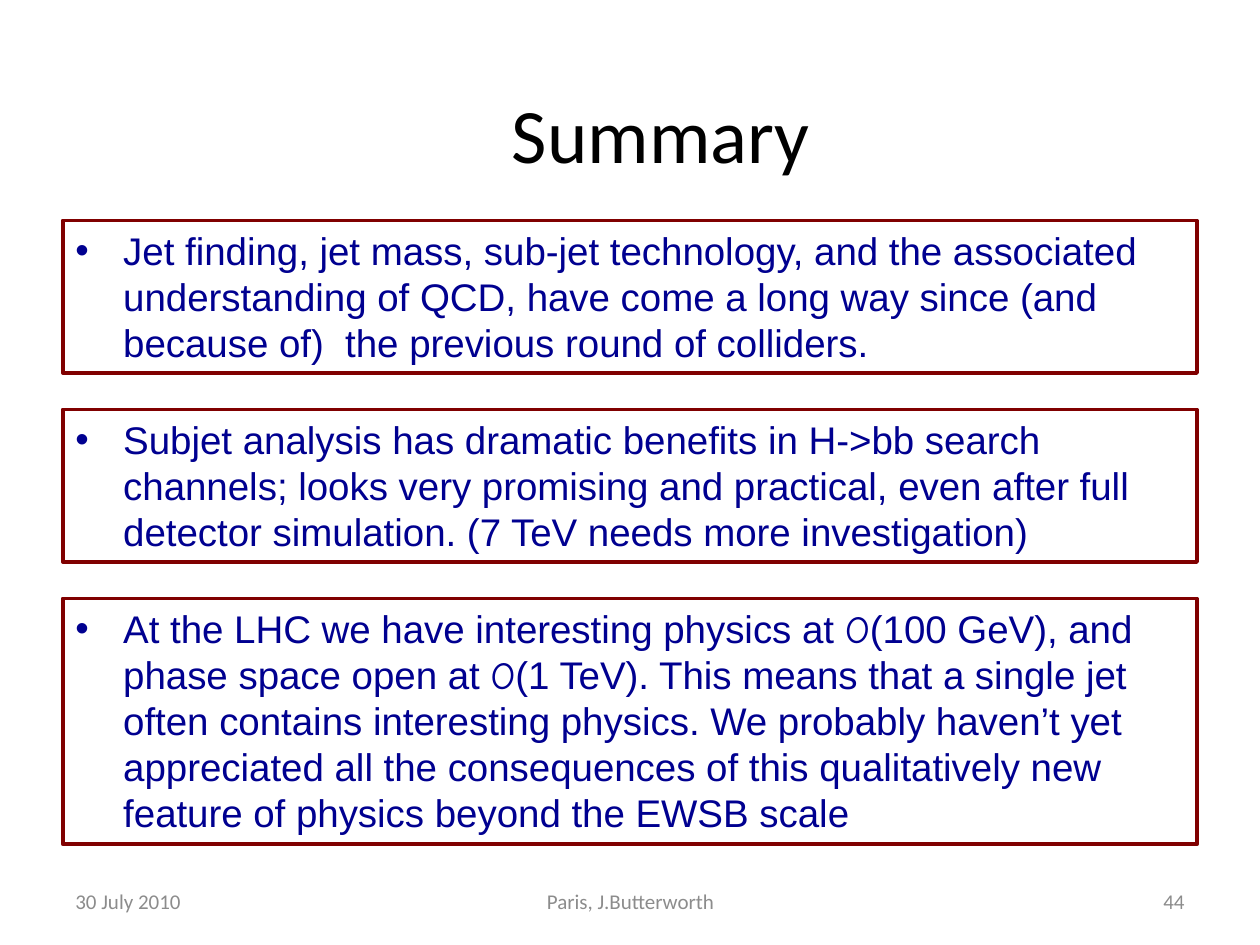
from lxml.etree import SubElement
from pptx import Presentation
from pptx.dml.color import RGBColor
from pptx.enum.shapes import MSO_SHAPE
from pptx.enum.text import MSO_ANCHOR, PP_ALIGN
from pptx.oxml.ns import qn
from pptx.util import Inches, Pt

COLORS = {"ink": "000000", "gray": "8C8C8C", "navy": "000090", "maroon": "800000"}
deck = Presentation()
deck.slide_width, deck.slide_height = Inches(10), Inches(7.5)
slide = deck.slides.add_slide(deck.slide_layouts[6])


def write(para, text, font, size, color):
    run = para.add_run()
    run.text = text
    look = {"name": font, "size": Pt(size)}
    for key, value in look.items():
        setattr(run.font, key, value)
    run.font.color.rgb = RGBColor.from_string(COLORS[color])


edge, wide = 0.5, 9
labels = [
    ("Summary", 0.57, 0.56, 9.35, 0.99, PP_ALIGN.CENTER, 44, "ink"),
    ("30 July 2010", edge, 6.95, 2.33, 0.4, PP_ALIGN.LEFT, 12, "gray"),
    ("44", edge + wide - 2.33, 6.95, 2.33, 0.4, PP_ALIGN.RIGHT, 12, "gray"),
    ("Paris, J.Butterworth", 3.42, 6.95, 3.17, 0.4, PP_ALIGN.CENTER, 12, "gray"),
]
for text, left, top, width, height, align, size, color in labels:
    label = slide.shapes.add_textbox(*map(Inches, (left, top, width, height)))
    frame = label.text_frame
    for key, value in {"word_wrap": True, "vertical_anchor": MSO_ANCHOR.MIDDLE}.items():
        setattr(frame, key, value)
    frame.paragraphs[0].alignment = align
    write(frame.paragraphs[0], text, "Calibri", size, color)

points = [
    (1.21, ["Jet finding, jet mass, sub-jet technology, and the associated understanding "
            "of QCD, have come a long way since (and because of)  the previous round of colliders."]),
    (1.21, ["Subjet analysis has dramatic benefits in H->bb search channels; looks very promising "
            "and practical, even after full detector simulation. (7 TeV needs more investigation)"]),
    (1.95, ["At the LHC we have interesting physics at ", "O",
            "(100 GeV), and phase space open at ", "O",
            "(1 TeV). This means that a single jet often contains interesting physics. "
            "We probably haven’t yet appreciated all the consequences of this qualitatively "
            "new feature of physics beyond the EWSB scale"]),
]
first, step = 1.75, 1.5
for row, (height, parts) in enumerate(points):
    box = slide.shapes.add_shape(
        MSO_SHAPE.RECTANGLE, *map(Inches, (edge, first + row * step, wide, height)))
    box.shadow.inherit = False
    box.fill.background()
    box.line.color.rgb = RGBColor.from_string(COLORS["maroon"])
    box.line.width = Pt(2.25)
    frame = box.text_frame
    for key, value in {"word_wrap": True, "vertical_anchor": MSO_ANCHOR.TOP}.items():
        setattr(frame, key, value)
    para = frame.paragraphs[0]
    para.alignment = PP_ALIGN.LEFT
    props = para._p.get_or_add_pPr()
    for key, value in {"marL": 0.38, "indent": -0.38}.items():
        props.set(key, str(Inches(value)))
    SubElement(props, qn("a:buFont")).set("typeface", "Arial")
    SubElement(props, qn("a:buChar")).set("char", "•")
    for part in parts:
        write(para, part, "Comic Neue" if part == "O" else "Arial", 22, "navy")

deck.save("out.pptx")
